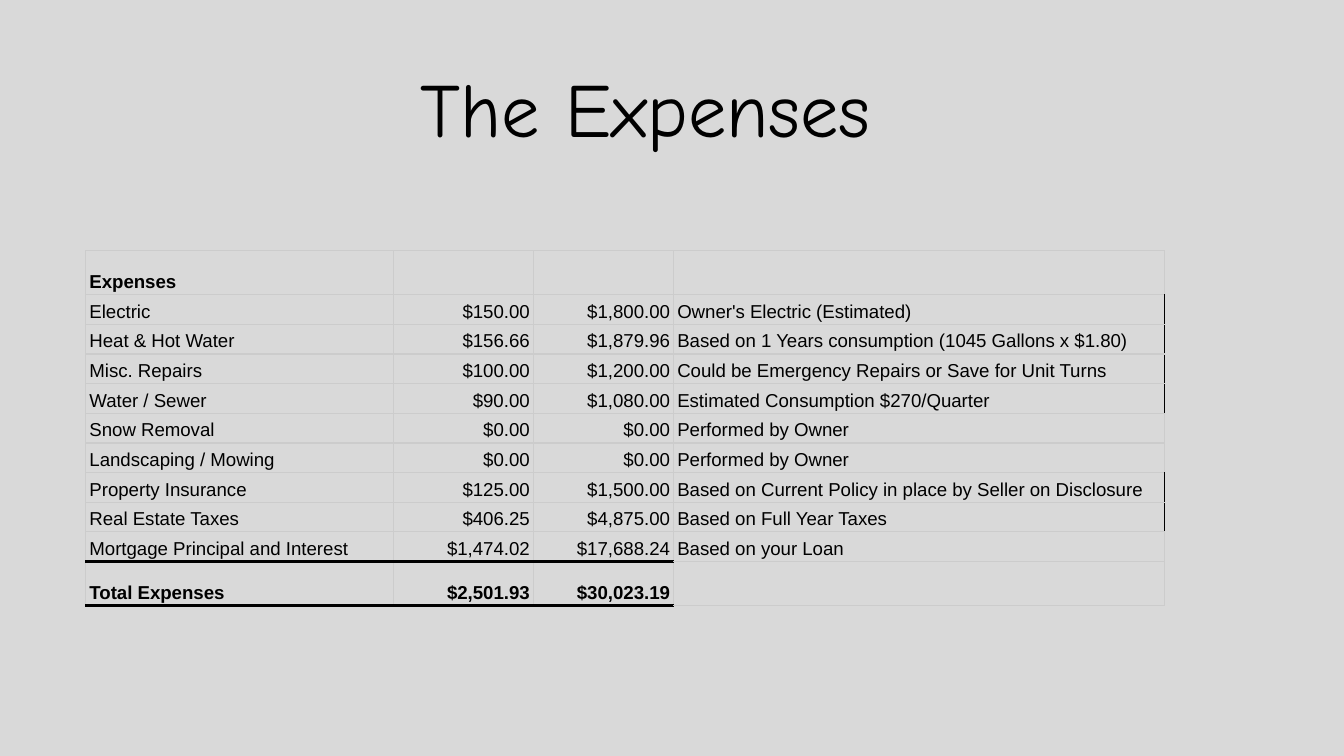
from lxml import etree
from pptx import Presentation
from pptx.dml.color import RGBColor
from pptx.enum import text
from pptx.oxml import ns
from pptx.util import Cm, Pt

BLACK = RGBColor(0x00, 0x00, 0x00)
GREY = RGBColor(0xCC, 0xCC, 0xCC)
PAPER = RGBColor(0xD9, 0xD9, 0xD9)

THIN = (GREY, 0.75)
EDGE = (BLACK, 0.75)
BOLD = (BLACK, 2.25)

COLS = (5.82, 2.64, 2.65, 9.28)
TALL, LOW = 0.82, 0.56
ROWS = (
    ("Expenses", "", "", ""),
    ("Electric", "$150.00", "$1,800.00", "Owner's Electric (Estimated)"),
    ("Heat & Hot Water", "$156.66", "$1,879.96",
     "Based on 1 Years consumption (1045 Gallons x $1.80)"),
    ("Misc. Repairs", "$100.00", "$1,200.00",
     "Could be Emergency Repairs or Save for Unit Turns"),
    ("Water / Sewer", "$90.00", "$1,080.00", "Estimated Consumption $270/Quarter"),
    ("Snow Removal", "$0.00", "$0.00", "Performed by Owner"),
    ("Landscaping / Mowing", "$0.00", "$0.00", "Performed by Owner"),
    ("Property Insurance", "$125.00", "$1,500.00",
     "Based on Current Policy in place by Seller on Disclosure"),
    ("Real Estate Taxes", "$406.25", "$4,875.00", "Based on Full Year Taxes"),
    ("Mortgage Principal and Interest", "$1,474.02", "$17,688.24",
     "Based on your Loan"),
    ("Total Expenses", "$2,501.93", "$30,023.19", ""),
)
LAST = len(ROWS) - 1
EDGED = (1, 2, 3, 4, 7, 8)


def style(para, name, size, bold, align):
    """Format a paragraph and its runs."""
    para.alignment = align
    for run in para.runs:
        font = run.font
        font.name, font.size, font.bold = name, Pt(size), bold
        font.color.rgb = BLACK


def border(cell, sides):
    """Draw the sides of a cell from a map of side to colour and width."""
    props = cell._tc.get_or_add_tcPr()
    for side, (color, width) in sides.items():
        line = etree.SubElement(props, ns.qn(f"a:ln{side}"), w=str(Pt(width)))
        fill = etree.SubElement(line, ns.qn("a:solidFill"))
        etree.SubElement(fill, ns.qn("a:srgbClr"), val=str(color))


def sides(row, col):
    """Choose the borders of a cell by its place in the table."""
    total = col < 3
    return {
        "L": THIN,
        "R": EDGE if col == 3 and row in EDGED else THIN,
        "T": BOLD if total and row == LAST else THIN,
        "B": BOLD if total and row >= LAST - 1 else THIN,
    }


def title(slide, left, top, width, height):
    """Place the slide heading."""
    frame = slide.shapes.add_textbox(left, top, width, height).text_frame
    frame.word_wrap = True
    frame.margin_left = frame.margin_right = Cm(0.25)
    frame.margin_top = frame.margin_bottom = Cm(0.25)
    frame.text = "The Expenses "
    style(frame.paragraphs[0], "Comic Neue", 41, False, text.PP_ALIGN.CENTER)


def costs(slide, left, top, width, height):
    """Place the table of expenses."""
    table = slide.shapes.add_table(
        len(ROWS), len(COLS), left, top, width, height).table
    table.first_row = table.horz_banding = False
    for col, wide in zip(table.columns, COLS):
        col.width = Cm(wide)
    for r, row in enumerate(ROWS):
        ends = r in (0, LAST)
        table.rows[r].height = Cm(TALL if ends else LOW)
        for c, words in enumerate(row):
            cell = table.cell(r, c)
            cell.margin_left = cell.margin_right = Cm(0.07)
            cell.margin_top, cell.margin_bottom = Cm(0.03), Cm(0.04)
            cell.vertical_anchor = text.MSO_ANCHOR.BOTTOM
            border(cell, sides(r, c))
            cell.fill.background()
            if words:
                cell.text_frame.text = words
                para = cell.text_frame.paragraphs[0]
                para.line_spacing = 1.15
                align = text.PP_ALIGN.RIGHT if c in (1, 2) else text.PP_ALIGN.LEFT
                style(para, "Arial", 10, ends, align)


def main():
    """Build and save the slide."""
    deck = Presentation()
    deck.slide_width, deck.slide_height = Cm(25.4), Cm(14.29)
    slide = deck.slides.add_slide(deck.slide_layouts[6])
    slide.background.fill.solid()
    slide.background.fill.fore_color.rgb = PAPER
    title(slide, Cm(2.45), Cm(0.9), Cm(20), Cm(2.9))
    costs(slide, Cm(1.62), Cm(4.74), Cm(sum(COLS)),
          Cm(2 * TALL + LOW * (len(ROWS) - 2)))
    deck.save("out.pptx")


if __name__ == "__main__":
    main()
